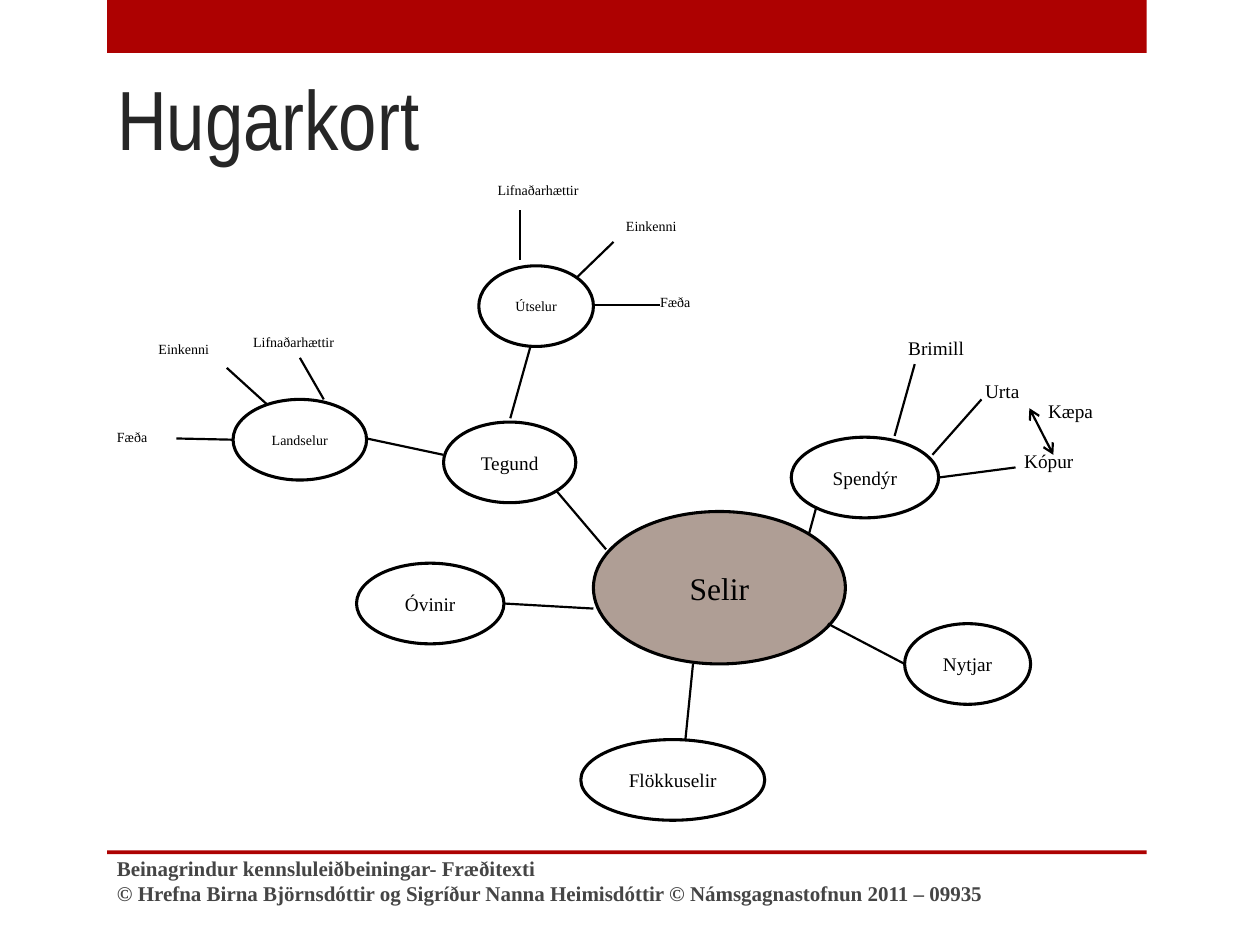
from dataclasses import dataclass

from lxml import etree
from pptx import Presentation
from pptx import util as u
from pptx.dml.color import RGBColor
from pptx.enum import shapes, text
from pptx.oxml import ns

PX = 9144  # 100 px to the inch


@dataclass(frozen=True)
class Theme:
    red: str = "AD0101"
    hub: str = "AF9E95"
    node: str = "FFFFFF"
    ink: str = "000000"
    title_ink: str = "262626"
    footer_ink: str = "454545"
    head_font: str = "Arial Narrow"
    body_font: str = "Times New Roman"
    title: int = 48
    hub_size: int = 18
    footer: int = 12
    branch: int = 11
    leaf: int = 8
    outline: float = 1.75
    link: float = 1.25


T = Theme()

# Map parts: positions are relative to the map's box
BRANCH_H = 64
BRANCHES = [  # label, x, y, width, type size
    ("Tegund", 269, 196, 105, T.branch),
    ("Spendýr", 545, 208, 117, T.branch),
    ("Nytjar", 635, 356, 100, T.branch),
    ("Flökkuselir", 378, 448, 146, T.branch),
    ("Óvinir", 200, 308, 117, T.branch),
    ("Landselur", 102, 178, 106, T.leaf),
    ("Útselur", 297, 72, 91, T.leaf),
]
LEAVES = [  # label, x, y, width, type size
    ("Fæða", 0, 196, 70, T.leaf),
    ("Einkenni", 33, 126, 66, T.leaf),
    ("Lifnaðarhættir", 108, 121, 95, T.leaf),
    ("Fæða", 431, 89, 61, T.leaf),
    ("Einkenni", 404, 29, 66, T.leaf),
    ("Lifnaðarhættir", 302, 0, 95, T.leaf),
    ("Brimill", 628, 123, 140, T.branch),
    ("Urta", 689, 157, 126, T.branch),
    ("Kópur", 720, 213, 100, T.branch),
    ("Kæpa", 739, 173, 84, T.branch),
]
LINKS = [  # x1, y1, x2, y2
    # hub to branches
    (398, 297, 359, 251), (635, 388, 574, 356), (559, 285, 565, 263),
    (461, 448, 467, 388), (388, 344, 317, 340),
    # Tegund to the two species
    (269, 222, 208, 209), (322, 193, 338, 136),
    # Landselur to its leaves
    (102, 210, 57, 209), (129, 182, 97, 153), (174, 178, 155, 145),
    # Útselur to its leaves
    (330, 67, 330, 28), (375, 81, 404, 53), (441, 103, 388, 103),
    # Spendýr to its leaves
    (627, 207, 643, 150), (657, 222, 696, 178), (662, 240, 723, 232),
]
PUP_LINK = (734, 185, 753, 222)


def px(*values):
    return [u.Emu(v * PX) for v in values]


def add_run(p, words, size, color, font=T.body_font, bold=False):
    r = p.add_run()
    r.text = words
    r.font.size, r.font.name, r.font.bold = u.Pt(size), font, bold
    r.font.color.rgb = RGBColor.from_string(color)


def add_shape(s, kind, box, fill, line=None):
    sp = s.shapes.add_shape(kind, *px(*box))
    sp.shadow.inherit = False
    sp.fill.solid()
    sp.fill.fore_color.rgb = RGBColor.from_string(fill)
    if line:
        sp.line.color.rgb = RGBColor.from_string(line)
        sp.line.width = u.Pt(T.outline)
    else:
        sp.line.fill.background()
    return sp


def add_node(s, label, box, size, fill):
    sp = add_shape(s, shapes.MSO_SHAPE.OVAL, box, fill, T.ink)
    tf = sp.text_frame
    tf.word_wrap = True
    tf.vertical_anchor = text.MSO_ANCHOR.MIDDLE
    p = tf.paragraphs[0]
    p.alignment = text.PP_ALIGN.CENTER
    add_run(p, label, size, T.ink)


def add_label(s, box, lines, size, color, bold=False, anchor=text.MSO_ANCHOR.TOP):
    tf = s.shapes.add_textbox(*px(*box)).text_frame
    tf.word_wrap = True
    tf.vertical_anchor = anchor
    for i, words in enumerate(lines):
        p = tf.add_paragraph() if i else tf.paragraphs[0]
        add_run(p, words, size, color, bold=bold)


def add_link(s, x, y, ends, arrows=False):
    x1, y1, x2, y2 = ends
    cx = s.shapes.add_connector(
        shapes.MSO_CONNECTOR.STRAIGHT, *px(x + x1, y + y1, x + x2, y + y2))
    cx.line.color.rgb = RGBColor.from_string(T.ink)
    cx.line.width = u.Pt(T.link)
    if arrows:
        ln = cx.line._get_or_add_ln()
        for end in ("a:headEnd", "a:tailEnd"):
            etree.SubElement(ln, ns.qn(end), type="arrow")
    etree.SubElement(cx._element.spPr, ns.qn("a:effectLst"))


def add_frame(s, x, y, w):
    """Red band at the top and thin rule above the footer."""
    for top, h in ((0, 42), (675, 3)):
        add_shape(s, shapes.MSO_SHAPE.RECTANGLE, (x, y + top, w, h), T.red)


def add_title(s, x, y, w, h):
    sp = s.shapes.title
    sp.left, sp.top, sp.width, sp.height = px(x, y, w, h)
    tf = sp.text_frame
    tf.vertical_anchor = text.MSO_ANCHOR.BOTTOM
    p = tf.paragraphs[0]
    p.alignment = text.PP_ALIGN.LEFT
    add_run(p, "Hugarkort", T.title, T.title_ink, T.head_font)


def add_mind_map(s, x, y):
    # Hub and branches
    add_node(s, "Selir", (x + 388, y + 267, 200, 121), T.hub_size, T.hub)
    for label, left, top, w, size in BRANCHES:
        add_node(s, label, (x + left, y + top, w, BRANCH_H), size, T.node)
    # Links
    for ends in LINKS:
        add_link(s, x, y, ends)
    add_link(s, x, y, PUP_LINK, arrows=True)
    # Leaf labels
    for label, left, top, w, size in LEAVES:
        h = 28 if size == T.leaf else 34
        add_label(s, (x + left, y + top, w, h), [label], size, T.ink)


def add_footer(s, x, y, w, h):
    lines = [
        "Beinagrindur kennsluleiðbeiningar- Fræðitexti",
        "© Hrefna Birna Björnsdóttir og Sigríður Nanna Heimisdóttir "
        "© Námsgagnastofnun 2011 – 09935",
    ]
    add_label(s, (x, y, w, h), lines, T.footer, T.footer_ink, True,
              text.MSO_ANCHOR.MIDDLE)


def main():
    prs = Presentation()
    prs.slide_width, prs.slide_height = px(1000, 750)
    s = prs.slides.add_slide(prs.slide_layouts[5])
    add_frame(s, 85, 0, 825)
    add_title(s, 83, 41, 390, 97)
    add_mind_map(s, 83, 139)
    add_footer(s, 83, 679, 826, 40)
    prs.save("out.pptx")


if __name__ == "__main__":
    main()
